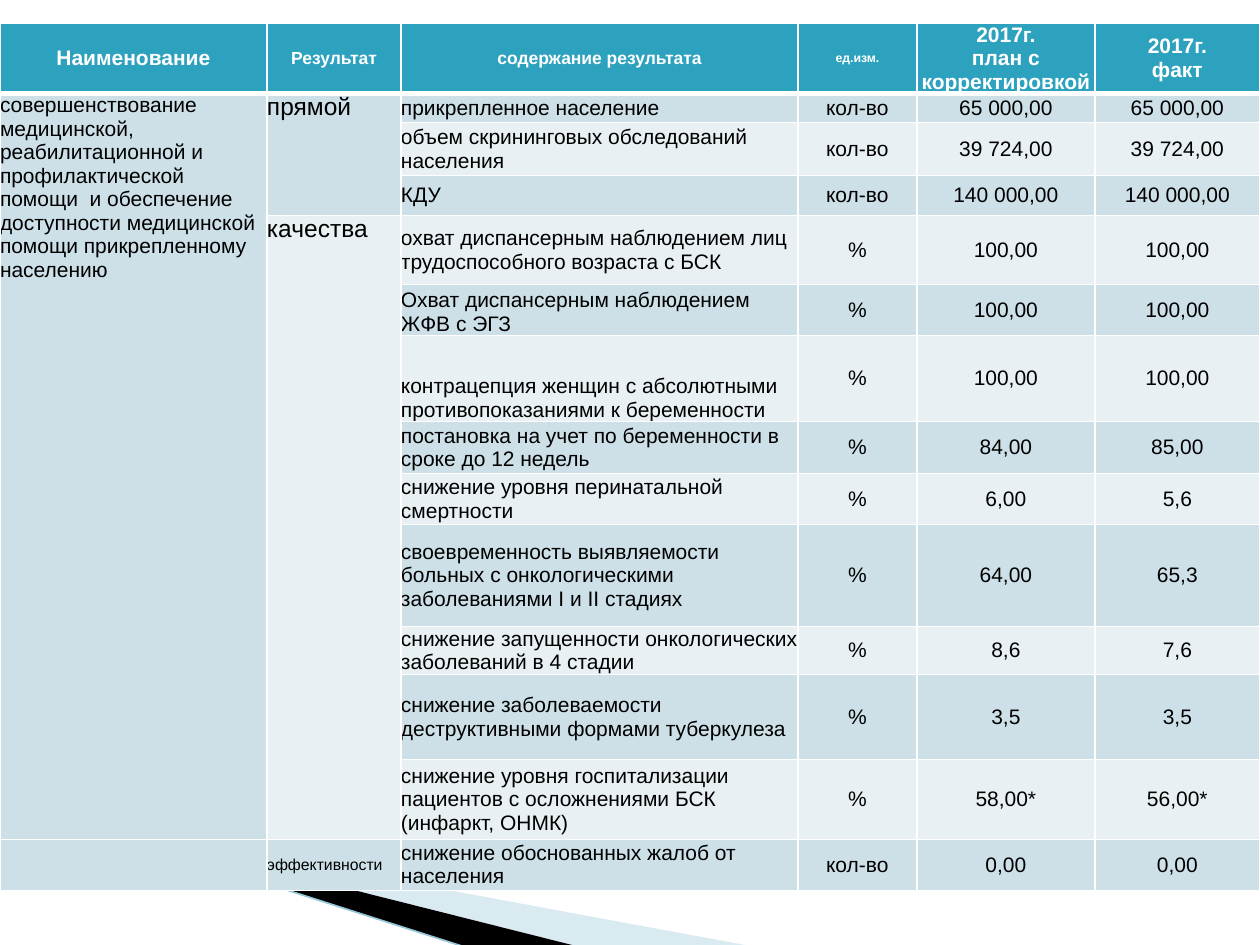
import pptx
import pptx.util
import pptx.dml.color
import pptx.enum.shapes
import pptx.enum.text
import pptx.oxml
import pptx.oxml.ns
from lxml import etree

RGB = pptx.dml.color.RGBColor
WHITE, BLACK = RGB(0xFF, 0xFF, 0xFF), RGB(0, 0, 0)
TEAL, BAND, PALE_BAND = RGB(0x2D, 0xA2, 0xBF), RGB(0xCD, 0xE0, 0xE8), RGB(0xE8, 0xF0, 0xF4)
SWOOSH, EDGE = RGB(0xA0, 0xCB, 0xDC), RGB(0x97, 0xC5, 0xD8)
LEFT, CENTER = pptx.enum.text.PP_ALIGN.LEFT, pptx.enum.text.PP_ALIGN.CENTER
TOP, MIDDLE, BOTTOM = (getattr(pptx.enum.text.MSO_ANCHOR, name) for name in ("TOP", "MIDDLE", "BOTTOM"))
PX = 914400 // 126

HEADERS = [  # text, size
    ("Наименование", 12), ("Результат", 10), ("содержание результата", 10),
    ("ед.изм.", 7), ("2017г.\nплан с корректировкой", 12), ("2017г.\nфакт", 12),
]
RESULTS = [  # content, unit, plan, fact, row height
    ("прикрепленное население", "кол-во", "65 000,00", "65 000,00", 29),
    ("объем скрининговых обследований населения", "кол-во", "39 724,00", "39 724,00", 53),
    ("КДУ", "кол-во", "140 000,00", "140 000,00", 40),
    ("охват диспансерным наблюдением лиц трудоспособного возраста с БСК", "%", "100,00", "100,00", 69),
    ("Охват диспансерным наблюдением ЖФВ с ЭГЗ", "%", "100,00", "100,00", 51),
    ("контрацепция женщин с абсолютными противопоказаниями к беременности", "%", "100,00", "100,00", 86),
    ("постановка на учет по беременности в сроке до 12 недель", "%", "84,00", "85,00", 52),
    ("снижение уровня перинатальной смертности", "%", "6,00", "5,6", 51),
    ("своевременность выявляемости больных с онкологическими заболеваниями I и II стадиях",
     "%", "64,00", "65,3", 102),
    ("снижение запущенности онкологических заболеваний в 4 стадии", "%", "8,6", "7,6", 48),
    ("снижение заболеваемости деструктивными формами туберкулеза", "%", "3,5", "3,5", 85),
    ("снижение уровня госпитализации пациентов с осложнениями БСК (инфаркт, ОНМК)",
     "%", "58,00*", "56,00*", 80),
    ("снижение обоснованных жалоб от населения", "кол-во", "0,00", "0,00", 51),
]
GROUPS = [  # first row, last row, column, text, size, anchor
    (1, 12, 0, "совершенствование медицинской, реабилитационной и профилактической помощи  и "
               "обеспечение доступности медицинской помощи прикрепленному населению", 12, TOP),
    (1, 3, 1, "прямой", 14, TOP),
    (4, 12, 1, "качества", 14, TOP),
    (13, 13, 1, "эффективности", 9, MIDDLE),
]
BOTTOM_ROWS = (5, 6)
COLUMN_WIDTHS = [267, 134, 397, 119, 178, 165]
HEADER_HEIGHT, TABLE_TOP = 70, 23
SWOOSHES = [  # outline, colour, opacity in percent
    ([(69, 820), (750, 946), (575, 946), (69, 819)], SWOOSH, 40),
    ([(67, 818), (576, 946), (469, 948), (68, 819)], BLACK, 100),
]
EDGE_ENDS = (-1, 798, 468, 948)


def add_swoosh(slide, outline, color, opacity):
    builder = slide.shapes.build_freeform(*outline[0], scale=PX)
    builder.add_line_segments(outline[1:], close=True)
    shape = builder.convert_to_shape()
    shape.shadow.inherit = False
    shape.line.fill.background()
    shape.fill.solid()
    shape.fill.fore_color.rgb = color
    if opacity < 100:
        tint = shape.fill._xPr.find(".//" + pptx.oxml.ns.qn("a:srgbClr"))
        etree.SubElement(tint, pptx.oxml.ns.qn("a:alpha"), val=str(opacity * 1000))


def add_edge(slide):
    edge = slide.shapes.add_connector(
        pptx.enum.shapes.MSO_CONNECTOR.STRAIGHT, *(end * PX for end in EDGE_ENDS))
    edge.line.color.rgb = EDGE
    edge.line.width = pptx.util.Pt(0.95)
    etree.SubElement(edge._element.spPr, pptx.oxml.ns.qn("a:effectLst"))


def style_cell(cell, fill, top=1, bottom=1):
    """Fill the cell, drop its margins and give it white borders (widths in points)."""
    cell.margin_left = cell.margin_right = cell.margin_top = cell.margin_bottom = 0
    cell.fill.solid()
    cell.fill.fore_color.rgb = fill
    properties = cell._tc.get_or_add_tcPr()
    for index, (side, width) in enumerate((("L", 1), ("R", 1), ("T", top), ("B", bottom))):
        properties.insert(index, pptx.oxml.parse_xml(
            f'<a:ln{side} {pptx.oxml.ns.nsdecls("a")} w="{width * 12700}">'
            f'<a:solidFill><a:srgbClr val="{WHITE}"/></a:solidFill></a:ln{side}>'))


def write(cell, text, size=12, align=LEFT, anchor=MIDDLE, color=BLACK, bold=False):
    cell.vertical_anchor = anchor
    frame = cell.text_frame
    for index, line in enumerate(text.split("\n")):
        para = frame.add_paragraph() if index else frame.paragraphs[0]
        para.alignment = align
        span = para.add_run()
        span.text = line
        span.font.name = "Arial"
        span.font.size = pptx.util.Pt(size)
        span.font.bold = bold
        span.font.color.rgb = color


def add_results_table(slide):
    heights = [HEADER_HEIGHT] + [result[-1] for result in RESULTS]
    table = slide.shapes.add_table(
        len(heights), len(COLUMN_WIDTHS), 0, TABLE_TOP * PX,
        sum(COLUMN_WIDTHS) * PX, sum(heights) * PX).table
    table.horz_banding = False
    for column, width in zip(table.columns, COLUMN_WIDTHS):
        column.width = width * PX
    for number, (row, height) in enumerate(zip(table.rows, heights)):
        row.height = height * PX
        fill = TEAL if number == 0 else BAND if number % 2 else PALE_BAND
        for cell in row.cells:
            style_cell(cell, fill, top=3 if number == 1 else 1, bottom=3 if number == 0 else 1)

    for column, (text, size) in enumerate(HEADERS):
        write(table.cell(0, column), text, size, CENTER, color=WHITE, bold=True)
    for number, (content, *values, _) in enumerate(RESULTS, start=1):
        write(table.cell(number, 2), content, anchor=BOTTOM if number in BOTTOM_ROWS else MIDDLE)
        for column, value in enumerate(values, start=3):
            write(table.cell(number, column), value, align=CENTER)
    for first, last, column, text, size, anchor in GROUPS:
        if last > first:
            table.cell(first, column).merge(table.cell(last, column))
        write(table.cell(first, column), text, size, anchor=anchor)


def main():
    deck = pptx.Presentation()
    deck.slide_width, deck.slide_height = 1260 * PX, 945 * PX
    slide = deck.slides.add_slide(deck.slide_layouts[6])
    for swoosh in SWOOSHES:
        add_swoosh(slide, *swoosh)
    add_edge(slide)
    add_results_table(slide)
    deck.save("out.pptx")


if __name__ == "__main__":
    main()
